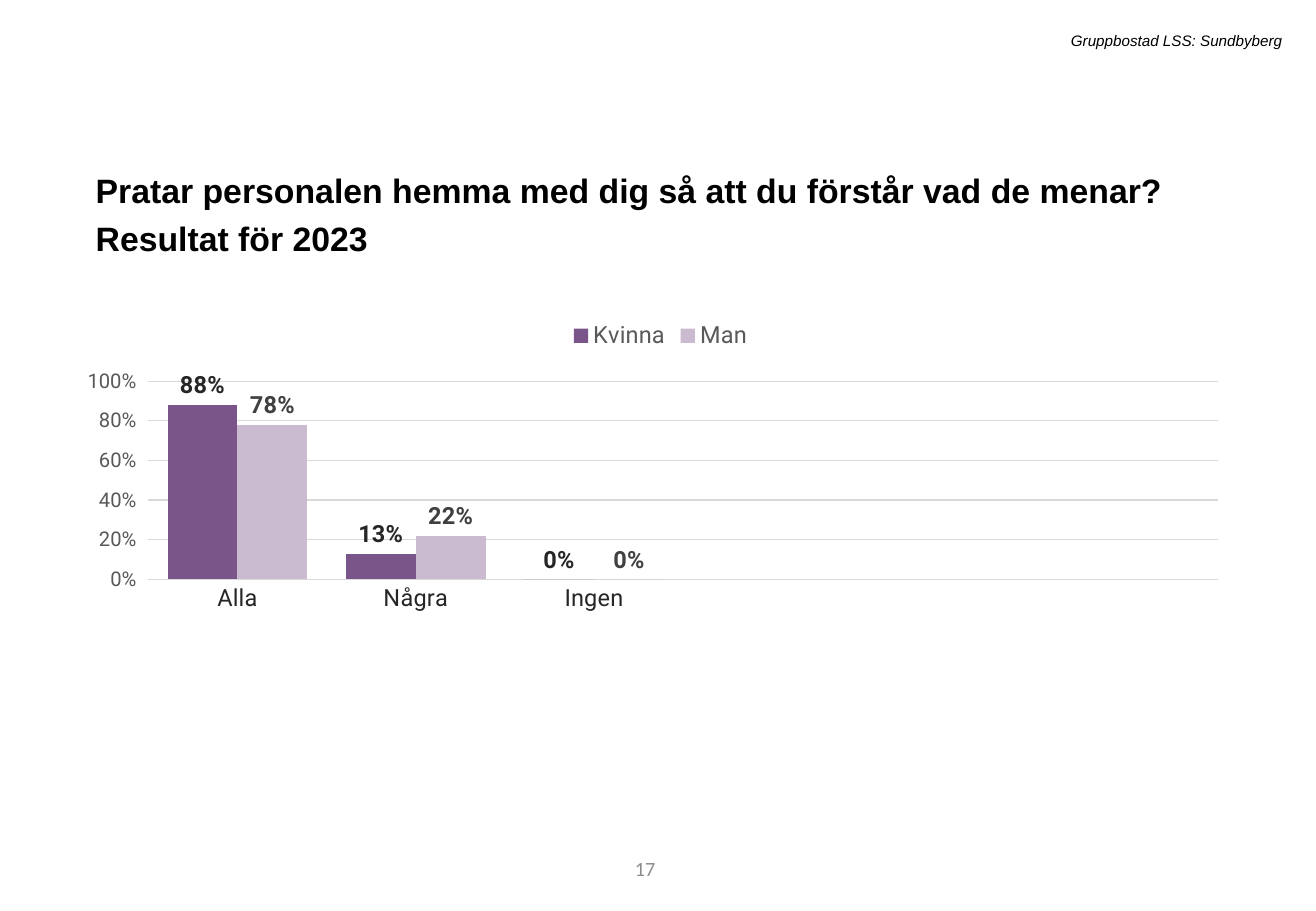
from dataclasses import dataclass

from lxml.etree import SubElement
from pptx import Presentation
from pptx.chart.data import CategoryChartData
from pptx.dml.color import RGBColor
from pptx.enum.chart import XL_CHART_TYPE, XL_LABEL_POSITION, XL_LEGEND_POSITION, XL_TICK_MARK
from pptx.enum.text import MSO_ANCHOR, MSO_AUTO_SIZE, PP_ALIGN
from pptx.oxml.ns import qn
from pptx.util import Cm, Pt


@dataclass(frozen=True)
class Theme:
    text_font: str = "Arial"
    number_font: str = "Calibri"
    chart_font: str = "Roboto"
    black: str = "000000"
    page_grey: str = "8C8C8C"
    axis_dark: str = "262626"
    axis_grey: str = "595959"
    grid: str = "D9D9D9"
    bar_colors: tuple = ("7A5589", "CABBD0")
    label_colors: tuple = ("262626", "404040")
    title_size: int = 20
    chart_size: int = 14
    scale_size: int = 12
    base_size: int = 10
    page_size: int = 12
    header_size: int = 9


THEME = Theme()
CATEGORIES = ("Alla", "Några", "Ingen", "", "", "")
ANSWERS = {
    "Kvinna": (0.88, 0.13, 0, None, None, None),
    "Man": (0.78, 0.22, 0, None, None, None),
}
PLOT_AREA = {"x": 0.05, "y": 0.154, "w": 0.94, "h": 0.413}


def style_font(font, name, size, color, bold=False, italic=False):
    font.name = name
    font.size = Pt(size)
    font.color.rgb = RGBColor.from_string(color)
    font.bold = bold
    font.italic = italic


def style_line(line):
    line.color.rgb = RGBColor.from_string(THEME.grid)
    line.width = Pt(0.75)


def add_text(slide, box, text, alignment, **font_style):
    """Add a one-paragraph text box and return its frame."""
    frame = slide.shapes.add_textbox(*map(Cm, box)).text_frame
    frame.word_wrap = True
    frame.auto_size = MSO_AUTO_SIZE.SHAPE_TO_FIT_TEXT
    paragraph = frame.paragraphs[0]
    paragraph.alignment = alignment
    run = paragraph.add_run()
    run.text = text
    style_font(run.font, **font_style)
    return frame


def add_header(slide, box):
    add_text(slide, box, "Gruppbostad LSS: Sundbyberg", PP_ALIGN.RIGHT,
             name=THEME.text_font, size=THEME.header_size, color=THEME.black, italic=True)


def add_title(slide, box):
    question = "Pratar personalen hemma med dig så att du förstår vad de menar? Resultat för 2023"
    frame = add_text(slide, box, question, PP_ALIGN.LEFT,
                     name=THEME.text_font, size=THEME.title_size, color=THEME.black, bold=True)
    frame.paragraphs[0].line_spacing = 1.2
    frame.paragraphs[0].space_before = Pt(10)


def add_page_number(slide, box):
    frame = add_text(slide, box, "17", PP_ALIGN.RIGHT,
                     name=THEME.number_font, size=THEME.page_size, color=THEME.page_grey)
    frame.auto_size = MSO_AUTO_SIZE.NONE
    frame.vertical_anchor = MSO_ANCHOR.MIDDLE


def set_plot_area(chart, fractions):
    """Fix the inner plot area as fractions of the chart."""
    plot_area = chart.plots[0]._element.getparent()
    layout = plot_area.find(qn("c:layout"))
    if layout is None:
        layout = SubElement(plot_area, qn("c:layout"))
        plot_area.insert(0, layout)
    manual = SubElement(layout, qn("c:manualLayout"))
    settings = {"layoutTarget": "inner", "xMode": "edge", "yMode": "edge", **fractions}
    for tag, value in settings.items():
        SubElement(manual, qn(f"c:{tag}")).set("val", str(value))


def style_axes(chart):
    category_axis = chart.category_axis
    category_axis.major_tick_mark = XL_TICK_MARK.NONE
    category_axis.has_major_gridlines = False
    style_line(category_axis.format.line)
    style_font(category_axis.tick_labels.font, THEME.chart_font, THEME.chart_size, THEME.axis_dark)

    value_axis = chart.value_axis
    value_axis.minimum_scale, value_axis.maximum_scale = 0, 1
    value_axis.major_unit = 0.2
    value_axis.format.line.fill.background()
    style_line(value_axis.major_gridlines.format.line)
    labels = value_axis.tick_labels
    labels.number_format, labels.number_format_is_linked = "0%", False
    style_font(labels.font, THEME.chart_font, THEME.scale_size, THEME.axis_grey)


def style_series(series, bar_color, label_color):
    series.format.fill.solid()
    series.format.fill.fore_color.rgb = RGBColor.from_string(bar_color)
    series.invert_if_negative = False
    labels = series.data_labels
    labels.show_value = True
    labels.position = XL_LABEL_POSITION.OUTSIDE_END
    labels.number_format, labels.number_format_is_linked = "0%", False
    style_font(labels.font, THEME.chart_font, THEME.chart_size, label_color, bold=True)


def add_answer_chart(slide, box):
    data = CategoryChartData(number_format="0%")
    data.categories = CATEGORIES
    for name, shares in ANSWERS.items():
        data.add_series(name, shares)
    chart = slide.shapes.add_chart(XL_CHART_TYPE.COLUMN_CLUSTERED, *map(Cm, box), data).chart
    chart.has_title = False
    style_font(chart.font, THEME.chart_font, THEME.base_size, THEME.black)

    # Legend
    chart.has_legend = True
    chart.legend.position = XL_LEGEND_POSITION.TOP
    chart.legend.include_in_layout = False
    style_font(chart.legend.font, THEME.chart_font, THEME.chart_size, THEME.axis_grey)

    # Axes and columns
    style_axes(chart)
    plot = chart.plots[0]
    plot.vary_by_categories = False
    plot.gap_width = 55
    plot.overlap = 0
    for series, bar_color, label_color in zip(plot.series, THEME.bar_colors, THEME.label_colors):
        style_series(series, bar_color, label_color)
    set_plot_area(chart, PLOT_AREA)


def main():
    presentation = Presentation()
    presentation.slide_width, presentation.slide_height = Cm(27.51), Cm(19.05)
    slide = presentation.slides.add_slide(presentation.slide_layouts[6])
    add_page_number(slide, (7.75, 17.65, 6.2, 1.02))
    add_answer_chart(slide, (1.83, 6.43, 23.88, 10.03))
    add_title(slide, (1.75, 3.25, 23.88, 1.2))
    add_header(slide, (4.55, 0.53, 22.5, 0.64))
    presentation.save("out.pptx")


if __name__ == "__main__":
    main()
